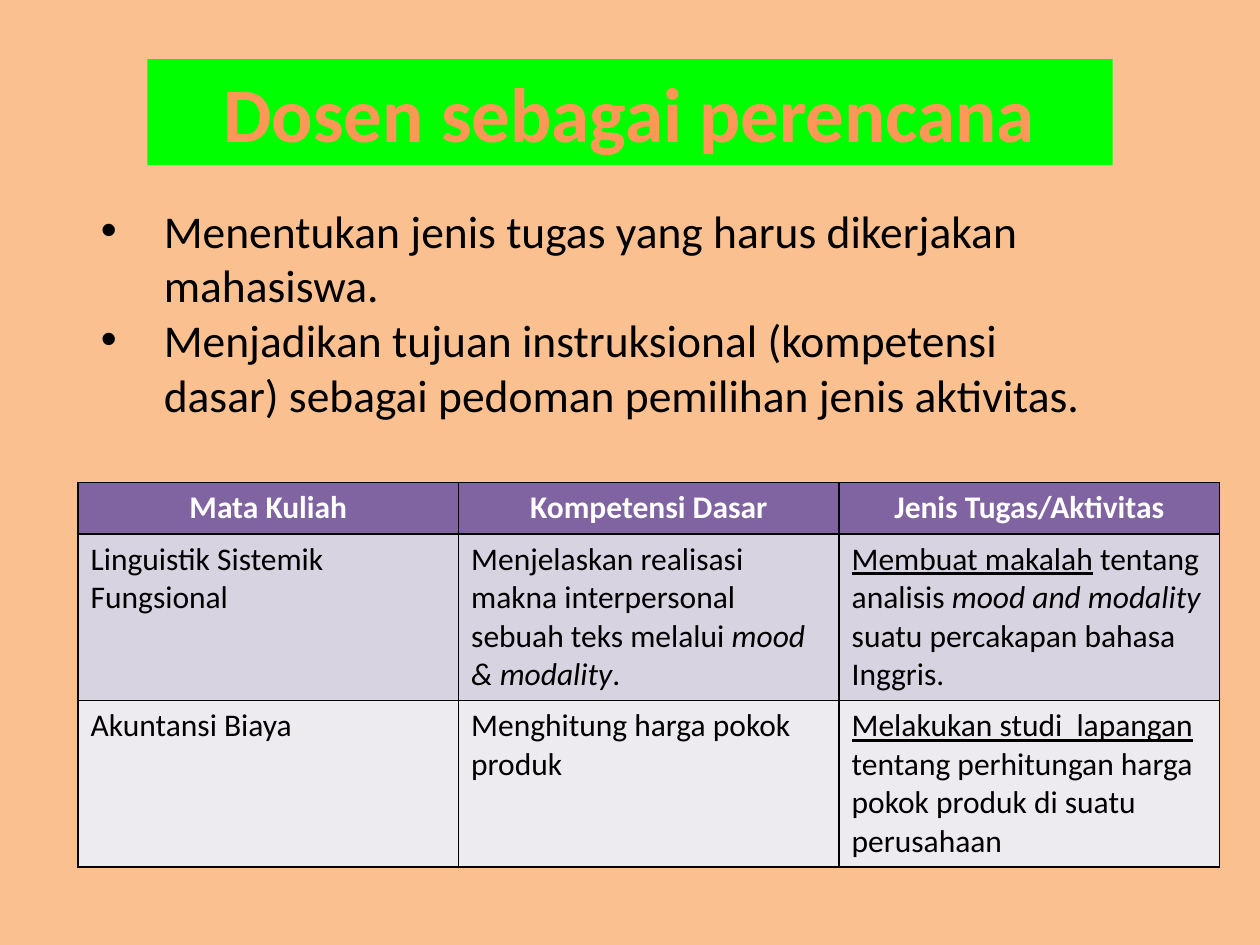
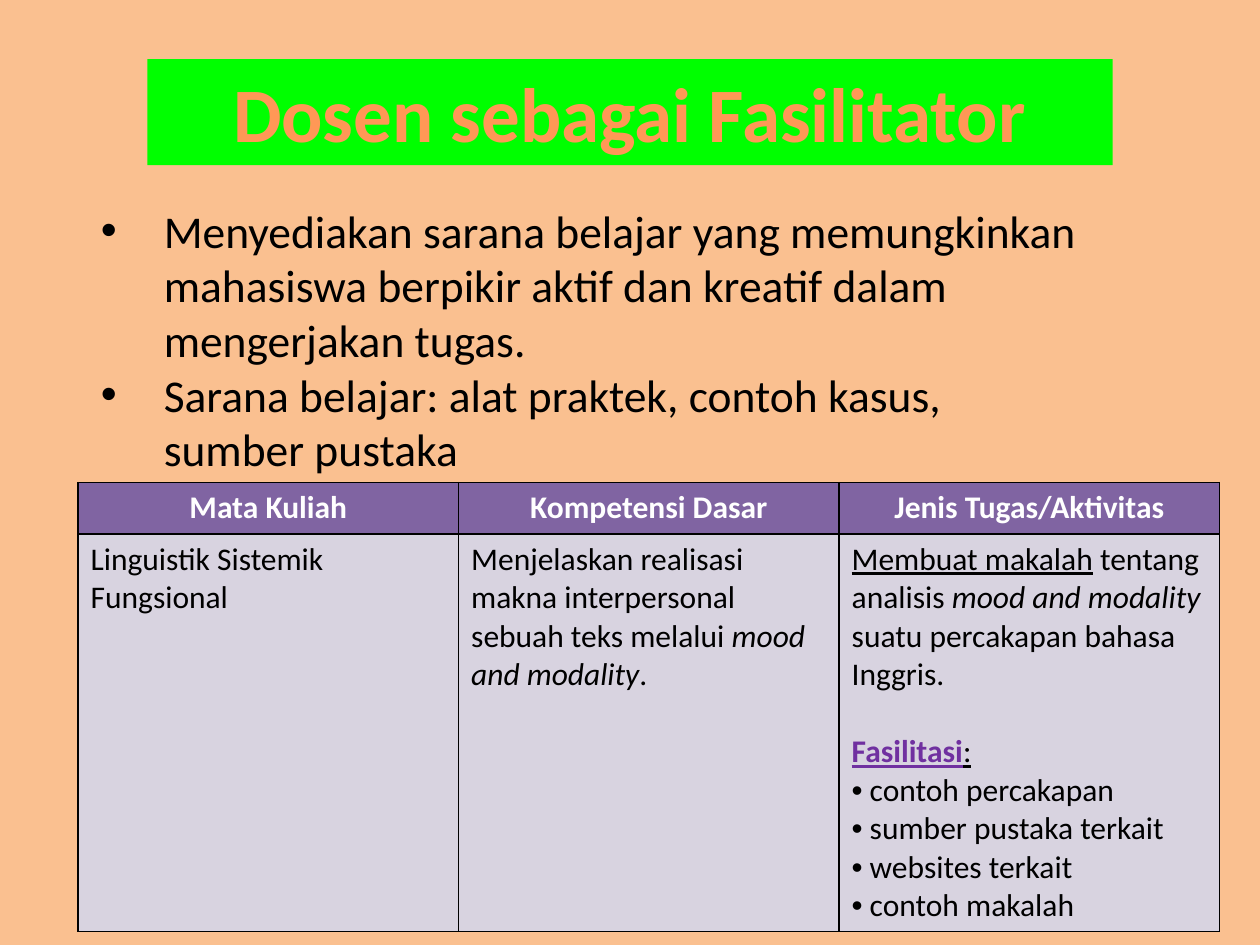
"""Build two slides on the roles of a lecturer, each with a title band, bullets and a task table."""
from dataclasses import dataclass

from lxml.etree import SubElement
from pptx import Presentation
from pptx.dml.color import RGBColor
from pptx.enum.text import MSO_ANCHOR, MSO_AUTO_SIZE, PP_ALIGN
from pptx.oxml.ns import qn
from pptx.util import Inches, Pt

HEADERS = ["Mata Kuliah", "Kompetensi Dasar", "Jenis Tugas/Aktivitas"]
ITALIC, UNDERLINE = {"italic": True}, {"underline": True}
REALISASI = "Menjelaskan realisasi makna interpersonal sebuah teks melalui "
MAKALAH = [("Membuat makalah", UNDERLINE), (" tentang analisis ", {}),
           ("mood and modality", ITALIC), (" suatu percakapan bahasa Inggris.", {})]
FASILITASI = [("Fasilitasi", {"underline": True, "bold": True, "color": "7030A0"}),
              (":", UNDERLINE)]
FACILITIES = ["contoh percakapan", "sumber pustaka terkait", "websites terkait", "contoh makalah"]

SLIDES = [
    {"title": "Dosen sebagai perencana",
     "bullets": ["Menentukan jenis tugas yang harus dikerjakan mahasiswa.",
                 "Menjadikan tujuan instruksional (kompetensi dasar) sebagai pedoman "
                 "pemilihan jenis aktivitas."],
     "body_height": 1.85, "table_height": 3.01,
     "rows": [
         [[{"text": "Linguistik Sistemik Fungsional"}],
          [{"text": [(REALISASI, {}), ("mood & modality", ITALIC), (".", {})]}],
          [{"text": MAKALAH}]],
         [[{"text": "Akuntansi Biaya"}],
          [{"text": "Menghitung harga pokok produk"}],
          [{"text": [("Melakukan studi  lapangan", UNDERLINE),
                     (" tentang perhitungan harga pokok produk di suatu perusahaan", {})]}]],
     ]},
    {"title": "Dosen sebagai Fasilitator",
     "bullets": ["Menyediakan sarana belajar yang memungkinkan mahasiswa berpikir aktif "
                 "dan kreatif dalam mengerjakan tugas.",
                 "Sarana belajar: alat praktek, contoh kasus,  sumber pustaka"],
     "body_height": 2.29, "table_height": 3.51,
     "rows": [
         [[{"text": "Linguistik Sistemik Fungsional"}],
          [{"text": [(REALISASI, {}), ("mood and modality", ITALIC), (".", {})]}],
          [{"text": MAKALAH}, {"text": FASILITASI, "before": 22}]
          + [{"text": f" {item}", "hang": 0} for item in FACILITIES]],
     ]},
]


@dataclass(frozen=True)
class Theme:
    """Colours, font and type sizes of the deck."""
    font: str = "Calibri"
    background: str = "FAC090"
    band: str = "00FF00"
    title: str = "FF9856"
    ink: str = "000000"
    header: str = "8064A2"
    header_ink: str = "FFFFFF"
    stripes: tuple = ("D8D3E0", "EDEAF0")
    title_size: int = 44
    body_size: int = 26
    table_size: int = 18


THEME = Theme()
LEFT, TABLE_TOP, TABLE_WIDTH, HEADER_HEIGHT = 0.62, 3.83, 9.06, 0.41


def paint(fill, color):
    """Make a fill solid."""
    fill.solid()
    fill.fore_color.rgb = RGBColor.from_string(color)


def write(p, text, size, color=THEME.ink, bold=False, align=PP_ALIGN.LEFT, before=0, hang=None):
    """Write plain text or (text, format) runs; hang sets a bullet with that indent."""
    p.alignment, p.space_before = align, Pt(before)
    if hang is not None:
        pPr = p._p.get_or_add_pPr()
        pPr.set("marL", str(Inches(hang)))
        pPr.set("indent", str(-Inches(hang)))
        SubElement(pPr, qn("a:buFont"), typeface="Arial")
        SubElement(pPr, qn("a:buChar"), char="•")
    for words, style in [(text, {})] if isinstance(text, str) else text:
        r = p.add_run()
        r.text = words
        r.font.name, r.font.size = THEME.font, Pt(size)
        r.font.bold = style.get("bold", bold)
        r.font.italic, r.font.underline = style.get("italic"), style.get("underline")
        r.font.color.rgb = RGBColor.from_string(style.get("color", color))


def write_all(tf, paragraphs, **common):
    """Fill a text frame with paragraphs that share a format."""
    for i, paragraph in enumerate(paragraphs):
        write(tf.add_paragraph() if i else tf.paragraphs[0], **common, **paragraph)


def place(sp, left, top, width, height, anchor):
    """Position a placeholder and return its text frame."""
    sp.left, sp.top, sp.width, sp.height = map(Inches, (left, top, width, height))
    tf = sp.text_frame
    tf.word_wrap, tf.auto_size, tf.vertical_anchor = True, MSO_AUTO_SIZE.NONE, anchor
    return tf


def fill_cell(cell, paragraphs, fill, **common):
    """Border, fill and write one table cell."""
    tcPr = cell._tc.get_or_add_tcPr()
    for side in ("lnL", "lnR", "lnT", "lnB"):
        ln = SubElement(tcPr, qn(f"a:{side}"), w=str(Pt(1)))
        SubElement(SubElement(ln, qn("a:solidFill")), qn("a:srgbClr"), val=THEME.ink)
    paint(cell.fill, fill)
    write_all(cell.text_frame, paragraphs, size=THEME.table_size, **common)


def add_task_table(s, rows, height):
    """Add the table of courses, competences and tasks."""
    table = s.shapes.add_table(len(rows) + 1, len(HEADERS), Inches(LEFT), Inches(TABLE_TOP),
                               Inches(TABLE_WIDTH), Inches(height)).table
    for col in table.columns:
        col.width = Inches(TABLE_WIDTH / len(HEADERS))
    for i, row in enumerate(table.rows):
        row.height = Inches((height - HEADER_HEIGHT) / len(rows) if i else HEADER_HEIGHT)
    for j, header in enumerate(HEADERS):
        fill_cell(table.cell(0, j), [{"text": header}], THEME.header,
                  color=THEME.header_ink, bold=True, align=PP_ALIGN.CENTER)
    for i, row in enumerate(rows):
        for j, paragraphs in enumerate(row):
            fill_cell(table.cell(i + 1, j), paragraphs, THEME.stripes[i % 2])


def add_role_slide(prs, content):
    """Add one slide about a role of the lecturer."""
    s = prs.slides.add_slide(prs.slide_layouts[1])
    paint(s.background.fill, THEME.background)
    title, body = s.placeholders
    paint(title.fill, THEME.band)
    tf = place(title, 1.17, 0.47, 7.66, 0.84, MSO_ANCHOR.MIDDLE)
    write_all(tf, [{"text": content["title"]}], size=THEME.title_size, color=THEME.title,
              bold=True, align=PP_ALIGN.CENTER)
    tf = place(body, 0.7, 1.56, 8.05, content["body_height"], MSO_ANCHOR.TOP)
    write_all(tf, [{"text": text} for text in content["bullets"]],
              size=THEME.body_size, hang=0.5)
    add_task_table(s, content["rows"], content["table_height"])


def main():
    """Build and save the deck."""
    prs = Presentation()
    prs.slide_width, prs.slide_height = Inches(10), Inches(7.5)
    for content in SLIDES:
        add_role_slide(prs, content)
    prs.save("out.pptx")


if __name__ == "__main__":
    main()
